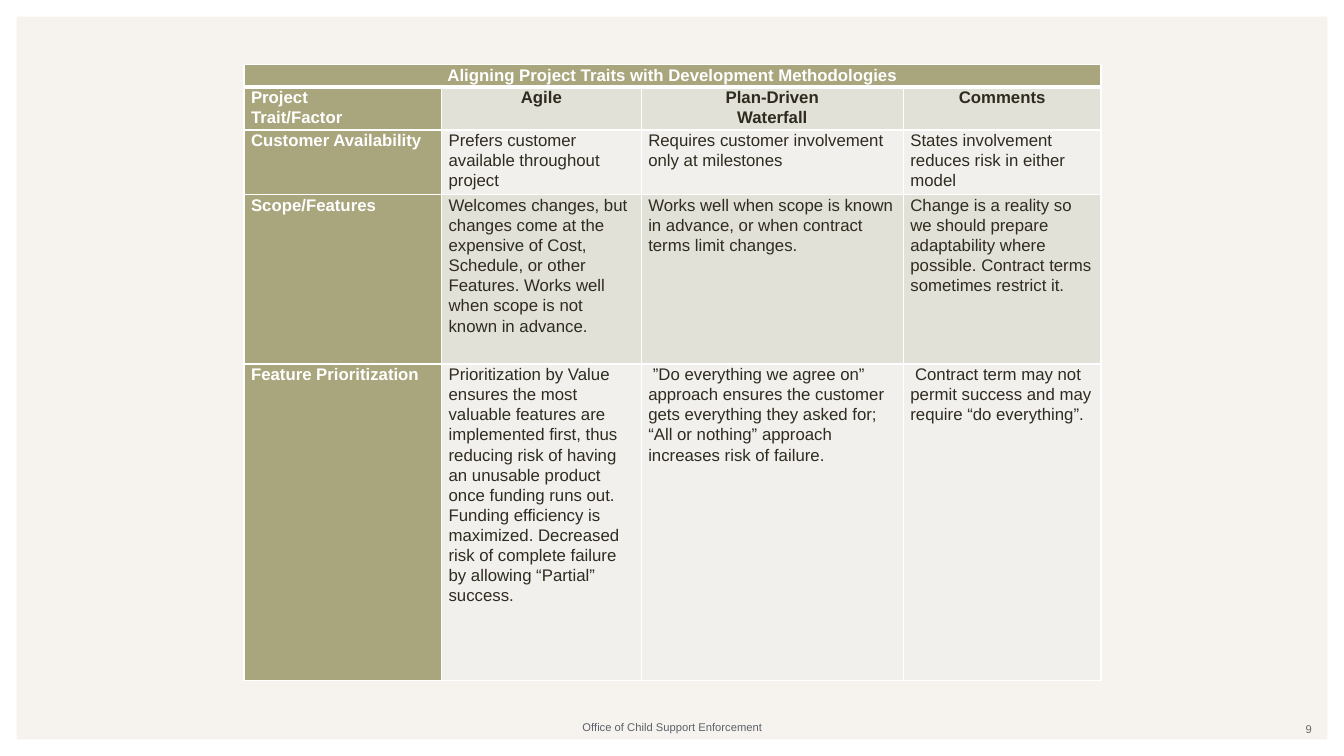
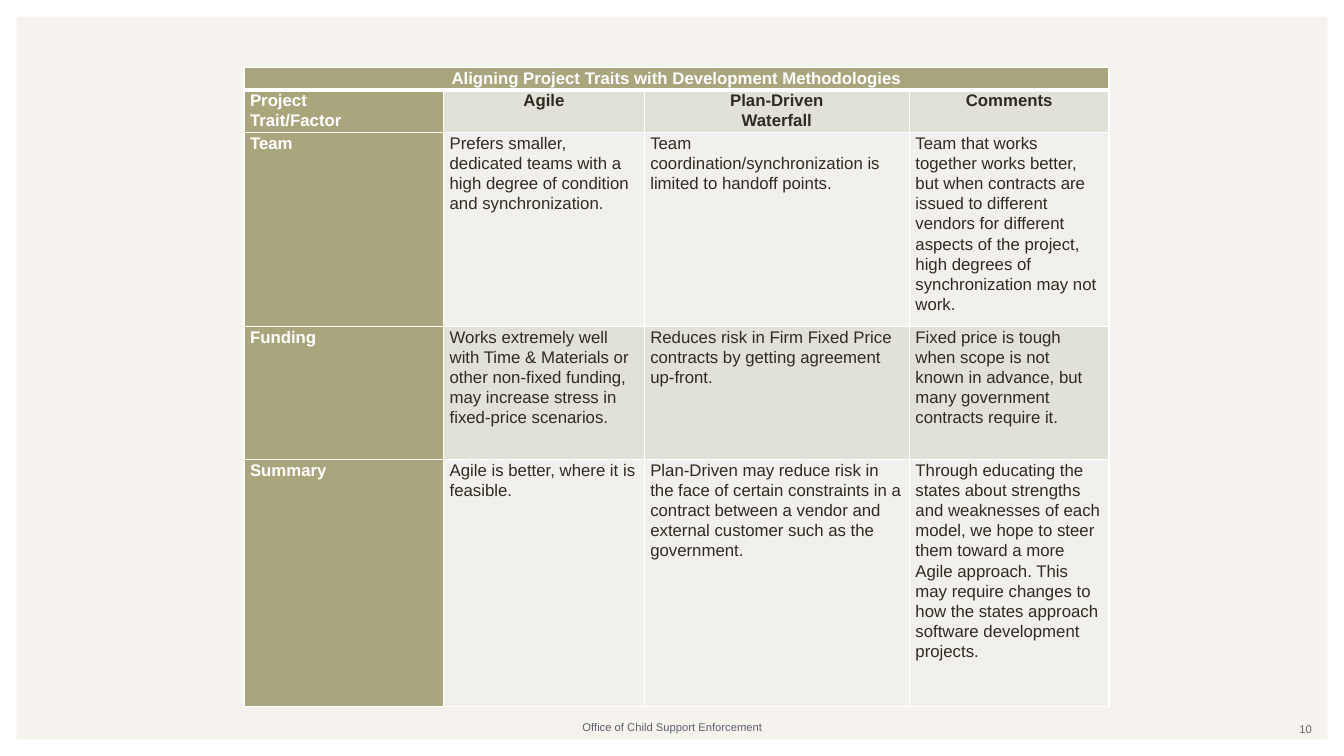
from dataclasses import dataclass

from lxml import etree
from pptx import Presentation
from pptx.dml.color import RGBColor
from pptx.enum.shapes import MSO_SHAPE
from pptx.enum.text import MSO_ANCHOR, PP_ALIGN
from pptx.oxml.ns import qn
from pptx.util import Inches, Pt

FRAME = MSO_SHAPE.FRAME
TOP, MIDDLE = MSO_ANCHOR.TOP, MSO_ANCHOR.MIDDLE
LEFT, CENTER, RIGHT = PP_ALIGN.LEFT, PP_ALIGN.CENTER, PP_ALIGN.RIGHT


@dataclass(frozen=True)
class Theme:
    font: str = "Arial"
    background: str = "F6F3EE"
    white: str = "FFFFFF"
    ink: str = "2F2B20"
    accent: str = "A9A57C"
    band_dark: str = "E2E1D7"
    band_light: str = "F1F0EC"
    footer: str = "5B616B"
    number: str = "6C6463"
    body_size: float = 12
    small_size: float = 8
    line_spacing: float = 1.07
    thin_border: float = 1
    thick_border: float = 3


THEME = Theme()
SLIDE_WIDTH, SLIDE_HEIGHT = 13.33, 7.5
TABLE_LEFT = 2.42
TABLE_TITLE = "Aligning Project Traits with Development Methodologies"
HEADINGS = ("Project\nTrait/Factor", "Agile", "Plan-Driven\nWaterfall", "Comments")
FOOTER = "Office of Child Support Enforcement"


@dataclass(frozen=True)
class TraitSlide:
    number: int
    top: float
    columns: tuple[float, ...]
    rows: tuple[float, ...]
    inset: float
    traits: tuple[tuple[str, ...], ...]


TRAIT_SLIDES = (
    TraitSlide(
        number=9,
        top=0.64,
        columns=(1.96, 1.98, 2.6, 1.96),
        rows=(0.22, 0.43, 0.64, 1.68, 3.14),
        inset=0.07,
        traits=(
            ("Customer Availability",
             "Prefers customer available throughout project",
             "Requires customer involvement only at milestones",
             "States involvement reduces risk in either model"),
            ("Scope/Features",
             "Welcomes changes, but changes come at the expensive of Cost, Schedule, "
             "or other Features. Works well when scope is not known in advance.",
             "Works well when scope is known in advance, or when contract terms limit changes.",
             "Change is a reality so we should prepare adaptability where possible. "
             "Contract terms sometimes restrict it."),
            ("Feature Prioritization",
             "Prioritization by Value ensures the most valuable features are implemented "
             "first, thus reducing risk of having an unusable product once funding runs out. "
             "Funding efficiency is maximized. Decreased risk of complete failure by "
             "allowing “Partial” success.",
             " ”Do everything we agree on” approach ensures the customer gets everything "
             "they asked for; “All or nothing” approach increases risk of failure.",
             " Contract term may not permit success and may require “do everything”."),
        ),
    ),
    TraitSlide(
        number=10,
        top=0.67,
        columns=(1.98, 1.99, 2.63, 1.98),
        rows=(0.22, 0.42, 1.92, 1.32, 2.45),
        inset=0.06,
        traits=(
            ("Team",
             "Prefers smaller, dedicated teams with a high degree of condition "
             "and synchronization.",
             "Team coordination/synchronization is limited to handoff points.",
             "Team that works together works better, but when contracts are issued to "
             "different vendors for different aspects of the project, high degrees of "
             "synchronization may not work."),
            ("Funding",
             "Works extremely well with Time & Materials or other non-fixed funding, "
             "may increase stress in fixed-price scenarios.",
             "Reduces risk in Firm Fixed Price contracts by getting agreement up-front.",
             "Fixed price is tough when scope is not known in advance, but many "
             "government contracts require it."),
            ("Summary",
             "Agile is better, where it is feasible.",
             "Plan-Driven may reduce risk in the face of certain constraints in a contract "
             "between a vendor and external customer such as the government.",
             "Through educating the states about strengths and weaknesses of each model, "
             "we hope to steer them toward a more Agile approach. This may require changes "
             "to how the states approach software development projects."),
        ),
    ),
)


def write_text(text_frame, text: str, *, color: str, size: float = THEME.body_size,
               bold: bool = False, align=LEFT, spacing: float = 1.0) -> None:
    """Write each line of the text as one formatted paragraph."""
    text_frame.word_wrap = True
    for index, line in enumerate(text.split("\n")):
        paragraph = text_frame.add_paragraph() if index else text_frame.paragraphs[0]
        paragraph.alignment = align
        paragraph.line_spacing = spacing
        run = paragraph.add_run()
        run.text = line
        run.font.name = THEME.font
        run.font.size = Pt(size)
        run.font.bold = bold
        run.font.color.rgb = RGBColor.from_string(color)


# Shared slide parts
def add_frame(slide) -> None:
    frame = slide.shapes.add_shape(FRAME, 0, 0, Inches(SLIDE_WIDTH), Inches(SLIDE_HEIGHT))
    frame.adjustments[0] = 0.022
    frame.shadow.inherit = False
    frame.fill.solid()
    frame.fill.fore_color.rgb = RGBColor.from_string(THEME.white)
    frame.line.fill.background()


def add_small_text(slide, text: str, left: float, top: float, width: float, *,
                   color: str, align, anchor) -> None:
    box = slide.shapes.add_textbox(Inches(left), Inches(top), Inches(width), Inches(0.24))
    box.text_frame.vertical_anchor = anchor
    write_text(box.text_frame, text, color=color, size=THEME.small_size, align=align)


# Table
def set_borders(cell, row: int) -> None:
    """Draw white cell borders, thicker between the title row and the headings."""
    thin, thick = THEME.thin_border, THEME.thick_border
    widths = {
        "a:lnL": thin,
        "a:lnR": thin,
        "a:lnT": thick if row == 1 else thin,
        "a:lnB": thick if row == 0 else thin,
    }
    properties = cell._tc.get_or_add_tcPr()
    for index, (tag, width) in enumerate(widths.items()):
        line = etree.Element(qn(tag), w=str(Pt(width)))
        fill = etree.SubElement(line, qn("a:solidFill"))
        etree.SubElement(fill, qn("a:srgbClr"), val=THEME.white)
        properties.insert(index, line)


def add_trait_table(slide, content: TraitSlide) -> None:
    texts = ((TABLE_TITLE, "", "", ""), HEADINGS, *content.traits)
    table = slide.shapes.add_table(
        len(content.rows), len(content.columns), Inches(TABLE_LEFT), Inches(content.top),
        Inches(sum(content.columns)), Inches(sum(content.rows))).table
    table.horz_banding = False
    for column, width in zip(table.columns, content.columns):
        column.width = Inches(width)
    for row, height in zip(table.rows, content.rows):
        row.height = Inches(height)
    table.cell(0, 0).merge(table.cell(0, len(content.columns) - 1))

    for row, row_texts in enumerate(texts):
        band = THEME.band_dark if row % 2 else THEME.band_light
        for column, text in enumerate(row_texts):
            cell = table.cell(row, column)
            accented = row == 0 or column == 0
            centered = row == 0 or (row == 1 and column > 0)
            cell.margin_left = cell.margin_right = Inches(content.inset)
            cell.margin_top = cell.margin_bottom = 0
            cell.fill.solid()
            cell.fill.fore_color.rgb = RGBColor.from_string(THEME.accent if accented else band)
            set_borders(cell, row)
            if not cell.is_spanned:
                write_text(cell.text_frame, text,
                           color=THEME.white if accented else THEME.ink,
                           bold=accented or row == 1,
                           align=CENTER if centered else LEFT,
                           spacing=THEME.line_spacing)


def add_trait_slide(presentation, content: TraitSlide) -> None:
    slide = presentation.slides.add_slide(presentation.slide_layouts.get_by_name("Blank"))
    add_frame(slide)
    add_small_text(slide, FOOTER, 4.56, 7.1, 4.22,
                   color=THEME.footer, align=CENTER, anchor=TOP)
    add_small_text(slide, str(content.number), 10, 7.11, 3.11,
                   color=THEME.number, align=RIGHT, anchor=MIDDLE)
    add_trait_table(slide, content)


def main() -> None:
    presentation = Presentation()
    presentation.slide_width = Inches(SLIDE_WIDTH)
    presentation.slide_height = Inches(SLIDE_HEIGHT)
    background = presentation.slide_master.background.fill
    background.solid()
    background.fore_color.rgb = RGBColor.from_string(THEME.background)
    for content in TRAIT_SLIDES:
        add_trait_slide(presentation, content)
    presentation.save("out.pptx")


if __name__ == "__main__":
    main()
